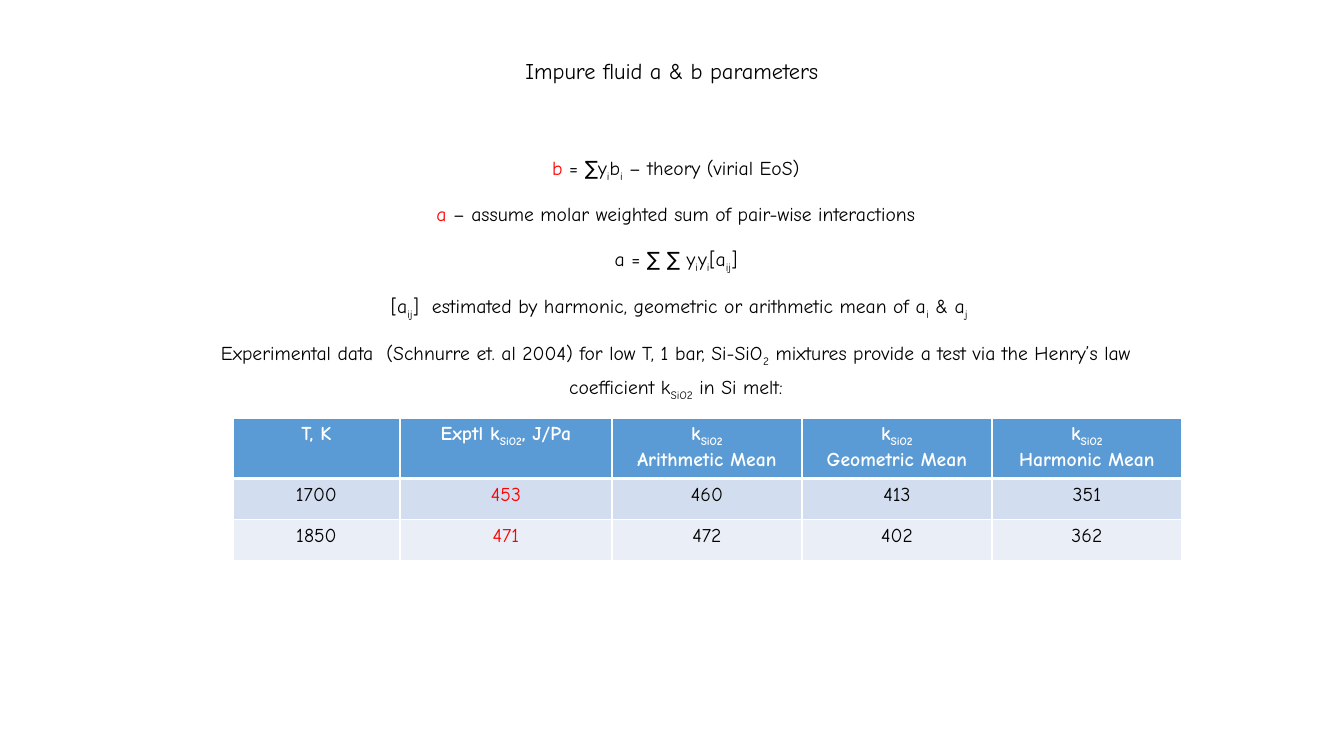
from dataclasses import dataclass
from lxml.etree import SubElement
from pptx import Presentation
from pptx.dml.color import RGBColor as RGB
from pptx.enum.text import MSO_ANCHOR as Anchor, PP_ALIGN as Align
from pptx.oxml.ns import qn
from pptx.util import Pt


@dataclass
class Theme:
    face: str = "Comic Neue"
    ink: str = "000000"
    red: str = "FF0000"
    white: str = "FFFFFF"
    head: str = "5B9BD5"
    bands: tuple = ("D2DEEF", "EAEFF7")
    title: int = 16
    body: int = 14


theme = Theme()
PX = 914400 / 100.8


def px(*sizes):
    return [round(size * PX) for size in sizes]


def write(para, text, color=theme.ink, size=theme.body, bold=False, lead=""):
    para.alignment = Align.CENTER
    font = para.font
    font.name, font.size, font.bold = theme.face, Pt(size), bold
    font.color.rgb = RGB.from_string(color)
    if lead:
        run = para.add_run()
        run.text = lead
        run.font.color.rgb = RGB.from_string(theme.red)
    for i, part in enumerate(text.split("~")):
        if part:
            run = para.add_run()
            run.text = part
            if i % 2:
                run.font._element.set("baseline", "-25000")


deck = Presentation()
deck.slide_width, deck.slide_height = px(1344, 756)
slide = deck.slides.add_slide(deck.slide_layouts[6])

title = slide.shapes.add_textbox(*px(168, -2, 1008, 91)).text_frame
title.word_wrap = True
title.vertical_anchor = Anchor.BOTTOM
write(title.paragraphs[0], "Impure fluid a & b parameters", size=theme.title)
title.paragraphs[0].line_spacing = 0.9

lines = [
    ("b ", "= ∑y~i~b~i~ – theory (virial EoS)"),
    ("a", " – assume molar weighted sum of pair-wise interactions"),
    ("", "a = ∑ ∑ y~i~y~i~[a~ij~]"),
    ("", " [a~ij~]  estimated by harmonic, geometric or arithmetic mean of a~i~ & a~j~"),
    ("", "Experimental data  (Schnurre et. al 2004) for low T, 1 bar, Si-SiO~2~ mixtures "
         "provide a test via the Henry’s law coefficient k~SiO2~ in Si melt:"),
]
body = slide.shapes.add_textbox(*px(172, 144, 1008, 528)).text_frame
body.word_wrap = True
for i, (lead, text) in enumerate(lines):
    para = body.add_paragraph() if i else body.paragraphs[0]
    write(para, text, lead=lead)
    para.line_spacing = 1.25
    para.space_before = Pt(10)

rows = [
    ["T, K", "Exptl k~SiO2~, J/Pa", "k~SiO2~\nArithmetic Mean",
     "k~SiO2~\nGeometric Mean", "k~SiO2~\nHarmonic Mean"],
    ["1700", "453", "460", "413", "351"],
    ["1850", "471", "472", "402", "362"],
]
widths = px(167, 212, 190, 190, 190)
heights = px(57, 41, 41)
left, top = px(233, 418)
table = slide.shapes.add_table(
    len(rows), len(widths), left, top, sum(widths), sum(heights)).table
for col, width in zip(table.columns, widths):
    col.width = width
for row, height in zip(table.rows, heights):
    row.height = height

for r, row in enumerate(rows):
    for c, text in enumerate(row):
        cell = table.cell(r, c)
        props = cell._tc.get_or_add_tcPr()
        for side in ("lnL", "lnR", "lnT", "lnB"):
            thick = (r, side) in ((0, "lnB"), (1, "lnT"))
            edge = SubElement(props, qn("a:" + side), w=str(Pt(3 if thick else 1)))
            paint = SubElement(edge, qn("a:solidFill"))
            SubElement(paint, qn("a:srgbClr"), val=theme.white)
        cell.fill.solid()
        cell.fill.fore_color.rgb = RGB.from_string(
            theme.bands[r - 1] if r else theme.head)
        color = theme.white if r == 0 else theme.red if c == 1 else theme.ink
        for i, line in enumerate(text.split("\n")):
            frame = cell.text_frame
            para = frame.add_paragraph() if i else frame.paragraphs[0]
            write(para, line, color, bold=r == 0)

deck.save("out.pptx")
